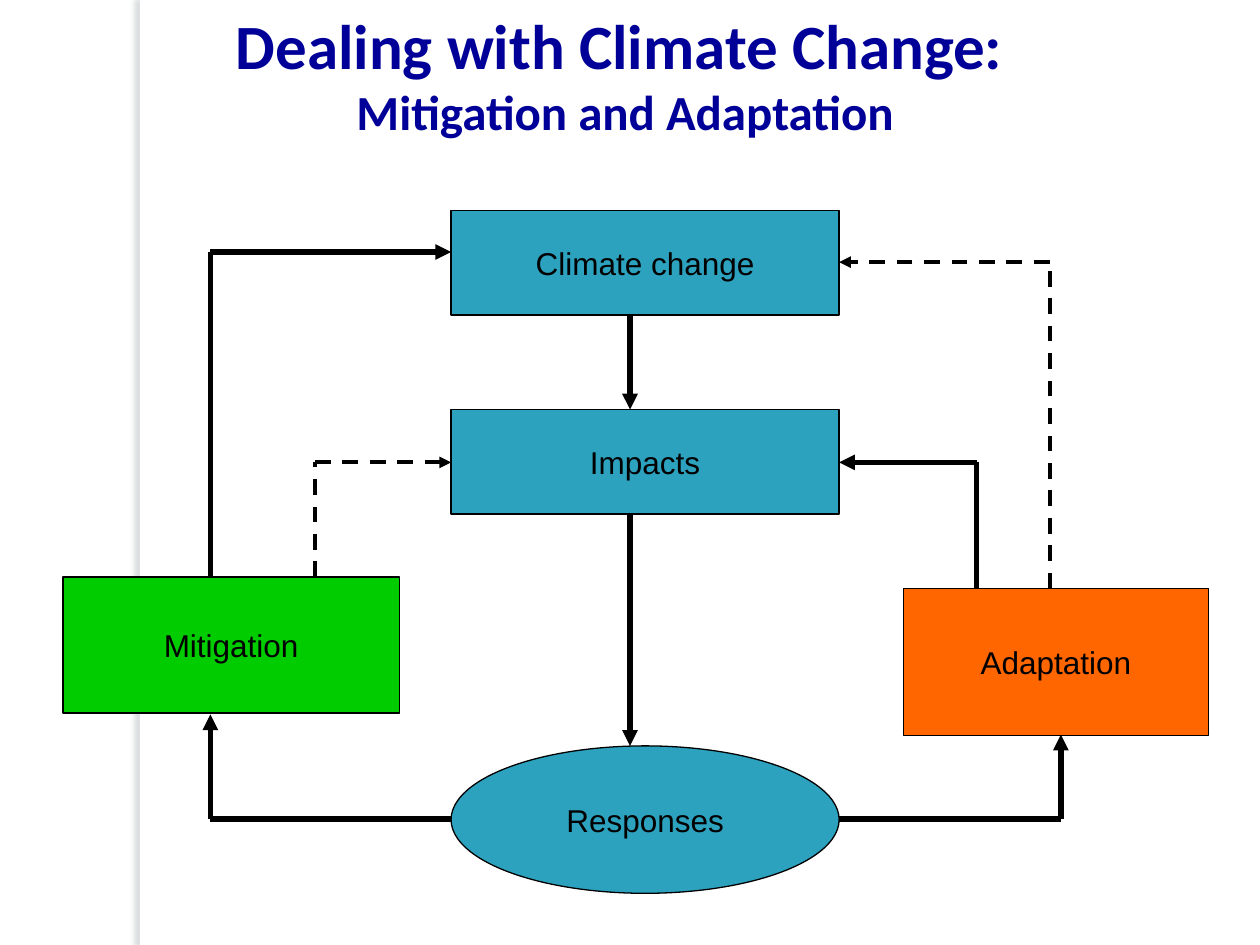
import itertools
from dataclasses import dataclass

import lxml.etree
import pptx
import pptx.dml.color
import pptx.enum.dml
import pptx.enum.shapes
import pptx.enum.text
import pptx.oxml
import pptx.oxml.ns
import pptx.util

Inches = pptx.util.Inches
Pt = pptx.util.Pt
Shape = pptx.enum.shapes.MSO_SHAPE
Align = pptx.enum.text.PP_ALIGN


@dataclass(frozen=True)
class Theme:
    white: str = "FFFFFF"
    ink: str = "000000"
    heading: str = "000099"
    process: str = "2DA2BF"
    mitigation: str = "00CC00"
    adaptation: str = "FF6600"
    band_shadow: str = "6E7A7D"
    heading_font: str = "Calibri"
    label_font: str = "Arial"
    title_size: float = 36
    subtitle_size: float = 28
    label_size: float = 18
    outline: float = 0.75
    main_line: float = 3
    side_line: float = 2.25


def rgb(value):
    return pptx.dml.color.RGBColor.from_string(value)


class Diagram:
    def __init__(self, slide, theme):
        self.slide = slide
        self.theme = theme

    def shape(self, kind, left, top, width, height, fill):
        shape = self.slide.shapes.add_shape(
            kind, Inches(left), Inches(top), Inches(width), Inches(height))
        shape.shadow.inherit = False
        shape.fill.solid()
        shape.fill.fore_color.rgb = rgb(fill)
        return shape

    def run(self, paragraph, text, font, size, color, bold=False):
        run = paragraph.add_run()
        run.text = text
        run.font.name = font
        run.font.size = Pt(size)
        run.font.color.rgb = rgb(color)
        run.font.bold = bold

    def band(self, left, top, width, height):
        band = self.shape(Shape.RECTANGLE, left, top, width, height, self.theme.white)
        band.line.fill.background()
        effects = band._element.spPr.find(pptx.oxml.ns.qn("a:effectLst"))
        effects.append(pptx.oxml.parse_xml(
            f'<a:outerShdw {pptx.oxml.ns.nsdecls("a")} blurRad="{Pt(3)}" dist="{Pt(3)}"'
            ' dir="10800000" algn="tl" rotWithShape="0">'
            f'<a:srgbClr val="{self.theme.band_shadow}"><a:alpha val="25000"/></a:srgbClr>'
            '</a:outerShdw>'))

    def title(self, left, top, width, height, heading, subheading):
        theme = self.theme
        frame = self.slide.shapes.add_textbox(
            Inches(left), Inches(top), Inches(width), Inches(height)).text_frame
        frame.word_wrap = True
        first, second = frame.paragraphs[0], frame.add_paragraph()
        first.alignment = second.alignment = Align.CENTER
        self.run(first, heading, theme.heading_font, theme.title_size, theme.heading, True)
        self.run(first, " ", theme.heading_font, theme.subtitle_size, theme.white, True)
        self.run(second, subheading, theme.heading_font, theme.subtitle_size,
                 theme.heading, True)

    def node(self, label, left, top, width, height, fill, kind=Shape.RECTANGLE):
        theme = self.theme
        node = self.shape(kind, left, top, width, height, fill)
        node.line.color.rgb = rgb(theme.ink)
        node.line.width = Pt(theme.outline)
        frame = node.text_frame
        frame.word_wrap = False
        frame.vertical_anchor = pptx.enum.text.MSO_ANCHOR.MIDDLE
        frame.paragraphs[0].alignment = Align.CENTER
        self.run(frame.paragraphs[0], label, theme.label_font, theme.label_size, theme.ink)

    def route(self, *points, dashed=False):
        theme = self.theme
        for start, end in itertools.pairwise(points):
            segment = self.slide.shapes.add_connector(
                pptx.enum.shapes.MSO_CONNECTOR.STRAIGHT,
                *(Inches(value) for value in start + end))
            segment.line.color.rgb = rgb(theme.ink)
            segment.line.width = Pt(theme.side_line if dashed else theme.main_line)
            if dashed:
                segment.line.dash_style = pptx.enum.dml.MSO_LINE.DASH
            properties = segment._element.spPr
            lxml.etree.SubElement(properties, pptx.oxml.ns.qn("a:effectLst"))
        lxml.etree.SubElement(segment.line._get_or_add_ln(),
                              pptx.oxml.ns.qn("a:tailEnd"), type="triangle")


def main():
    presentation = pptx.Presentation()
    presentation.slide_width = Inches(10)
    presentation.slide_height = Inches(7.5)
    theme = Theme()
    diagram = Diagram(
        presentation.slides.add_slide(presentation.slide_layouts[6]), theme)

    diagram.band(1.11, 0, 0.08, 7.5)
    diagram.title(0.25, 0, 9.42, 1.21,
                  "Dealing with Climate Change:", "Mitigation and Adaptation")

    left, width = 3.58, 3.08
    right = left + width
    diagram.node("Climate change", left, 1.67, width, 0.83, theme.process)
    diagram.node("Impacts", left, 3.25, width, 0.83, theme.process)
    diagram.node("Responses", left, 5.92, width, 1.17, theme.process, Shape.OVAL)
    diagram.node("Mitigation", 0.5, 4.58, 2.67, 1.08, theme.mitigation)
    diagram.node("Adaptation", 7.17, 4.67, 2.42, 1.17, theme.adaptation)

    diagram.route((5, 2.5), (5, 3.25))
    diagram.route((5, 4.08), (5, 5.92))
    diagram.route((left, 6.5), (1.67, 6.5), (1.67, 5.67))
    diagram.route((1.67, 4.58), (1.67, 2), (left, 2))
    diagram.route((2.5, 4.58), (2.5, 3.67), (left, 3.67), dashed=True)
    diagram.route((right, 6.5), (8.42, 6.5), (8.42, 5.83))
    diagram.route((7.75, 4.67), (7.75, 3.67), (right, 3.67))
    diagram.route((8.33, 4.67), (8.33, 2.08), (right, 2.08), dashed=True)

    presentation.save("out.pptx")


if __name__ == "__main__":
    main()
